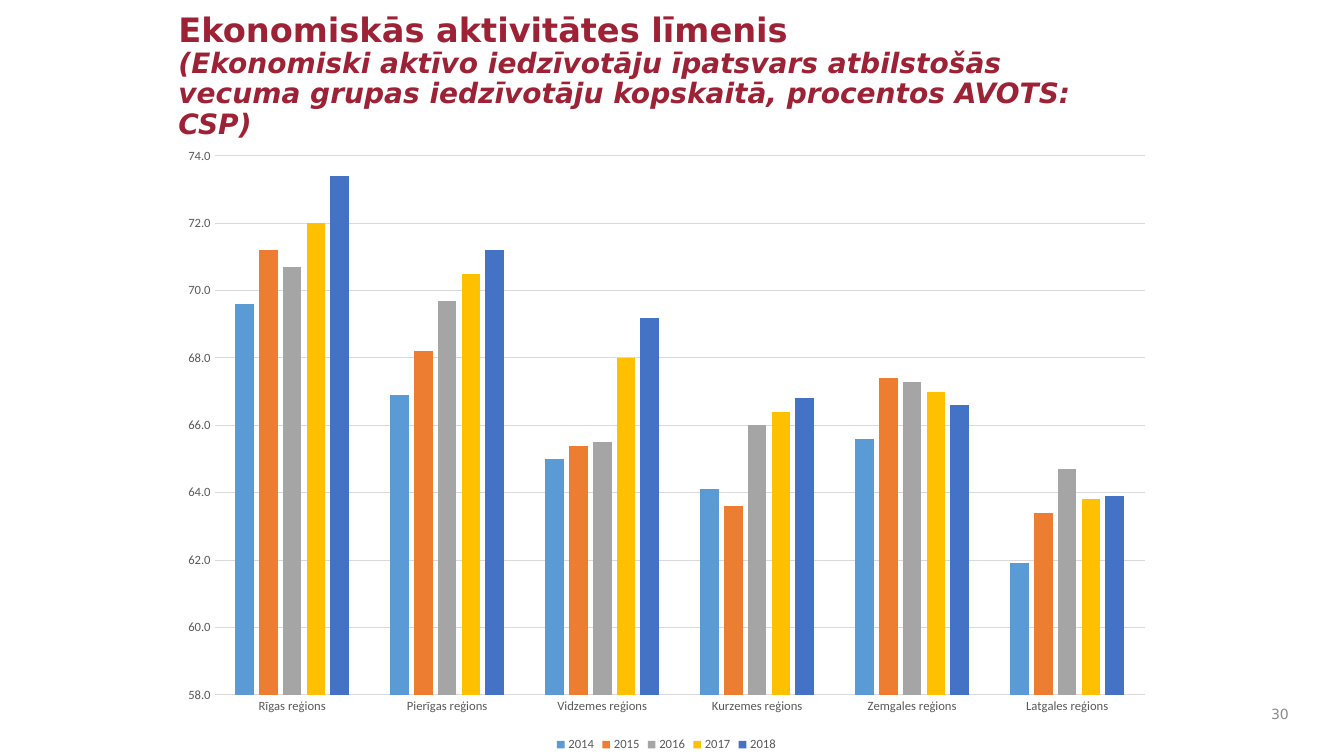
from dataclasses import dataclass

from pptx import Presentation
from pptx.chart.axis import CategoryAxis, ValueAxis
from pptx.chart.data import CategoryChartData
from pptx.dml.color import RGBColor
from pptx.enum.chart import XL_CHART_TYPE, XL_LEGEND_POSITION, XL_TICK_MARK
from pptx.enum.text import MSO_ANCHOR, MSO_AUTO_SIZE, PP_ALIGN
from pptx.util import Inches, Pt

TITLE_FONT = "DejaVu Sans"
CHART_FONT = "Calibri"
MAROON = "9D2235"
LABEL_GREY = "595959"
GRID_GREY = "D9D9D9"

REGIONS = ["Rīgas reģions", "Pierīgas reģions", "Vidzemes reģions",
           "Kurzemes reģions", "Zemgales reģions", "Latgales reģions"]


@dataclass
class YearSeries:
    year: str
    rates: list[float]
    color: str


YEARS = [
    YearSeries("2014", [69.6, 66.9, 65, 64.1, 65.6, 61.9], "5B9BD5"),
    YearSeries("2015", [71.2, 68.2, 65.4, 63.6, 67.4, 63.4], "ED7D31"),
    YearSeries("2016", [70.7, 69.7, 65.5, 66, 67.3, 64.7], "A5A5A5"),
    YearSeries("2017", [72, 70.5, 68, 66.4, 67, 63.8], "FFC000"),
    YearSeries("2018", [73.4, 71.2, 69.2, 66.8, 66.6, 63.9], "4472C4"),
]


def rgb(value: str) -> RGBColor:
    return RGBColor.from_string(value)


def style_font(font, size: float, color: str, name: str = CHART_FONT,
               bold: bool = False, italic: bool = False) -> None:
    font.name, font.size = name, Pt(size)
    font.bold, font.italic = bold, italic
    font.color.rgb = rgb(color)


def add_text(paragraph, text: str, **style) -> None:
    run = paragraph.add_run()
    run.text = text
    style_font(run.font, name=TITLE_FONT, **style)


def place(shape, left: float, top: float, width: float, height: float) -> None:
    shape.left, shape.top = Inches(left), Inches(top)
    shape.width, shape.height = Inches(width), Inches(height)


def grey_line(line) -> None:
    line.color.rgb = rgb(GRID_GREY)
    line.width = Pt(0.75)


def style_axis(axis: CategoryAxis | ValueAxis) -> None:
    axis.major_tick_mark = axis.minor_tick_mark = XL_TICK_MARK.NONE
    style_font(axis.tick_labels.font, 9, LABEL_GREY)


def add_activity_chart(slide) -> None:
    chart_data = CategoryChartData(number_format="0.0")
    chart_data.categories = REGIONS
    for entry in YEARS:
        chart_data.add_series(entry.year, entry.rates)
    chart = slide.shapes.add_chart(
        XL_CHART_TYPE.COLUMN_CLUSTERED, Inches(1.67), Inches(1.35),
        Inches(9.88), Inches(6.15), chart_data).chart
    chart.has_title = False
    style_font(chart.font, 10, "000000")

    # Columns
    plot = chart.plots[0]
    plot.gap_width, plot.overlap = 219, -27
    plot.vary_by_categories = False
    for series, entry in zip(plot.series, YEARS):
        series.format.fill.solid()
        series.format.fill.fore_color.rgb = rgb(entry.color)
        series.invert_if_negative = False

    # Axes
    regions, rates = chart.category_axis, chart.value_axis
    style_axis(regions)
    grey_line(regions.format.line)
    style_axis(rates)
    rates.format.line.fill.background()
    rates.minimum_scale, rates.maximum_scale = 58, 74
    rates.major_unit = 2
    rates.tick_labels.number_format = "0.0"
    rates.tick_labels.number_format_is_linked = False
    rates.has_major_gridlines = True
    grey_line(rates.major_gridlines.format.line)

    # Legend
    chart.has_legend = True
    chart.legend.position = XL_LEGEND_POSITION.BOTTOM
    chart.legend.include_in_layout = False
    style_font(chart.legend.font, 9, LABEL_GREY)


def add_heading(slide) -> None:
    title = slide.shapes.title
    place(title, 1.67, 0.08, 9.67, 1.26)
    title.fill.solid()
    title.fill.fore_color.rgb = rgb("FFFFFF")
    frame = title.text_frame
    frame.word_wrap = True
    frame.auto_size = MSO_AUTO_SIZE.NONE
    frame.vertical_anchor = MSO_ANCHOR.TOP
    heading = frame.paragraphs[0]
    heading.alignment = PP_ALIGN.LEFT
    heading.line_spacing = 0.9
    heading.space_before = Pt(0)
    add_text(heading, "Ekonomiskās aktivitātes līmenis",
             size=24, color=MAROON, bold=True)
    heading.add_line_break()
    add_text(heading, "(Ekonomiski aktīvo iedzīvotāju īpatsvars atbilstošās "
             "vecuma grupas iedzīvotāju kopskaitā, procentos AVOTS: CSP)",
             size=20, color=MAROON, bold=True, italic=True)


def add_page_number(slide) -> None:
    page_number = slide.shapes.add_textbox(
        Inches(12.44), Inches(6.92), Inches(0.44), Inches(0.33))
    frame = page_number.text_frame
    frame.word_wrap = True
    frame.vertical_anchor = MSO_ANCHOR.MIDDLE
    frame.paragraphs[0].alignment = PP_ALIGN.RIGHT
    add_text(frame.paragraphs[0], "30", size=10, color="8C8C8C")


def main() -> None:
    deck = Presentation()
    deck.slide_width, deck.slide_height = Inches(13.33), Inches(7.5)
    slide = deck.slides.add_slide(deck.slide_layouts.get_by_name("Title Only"))
    add_heading(slide)
    add_activity_chart(slide)
    add_page_number(slide)
    deck.save("out.pptx")


if __name__ == "__main__":
    main()
